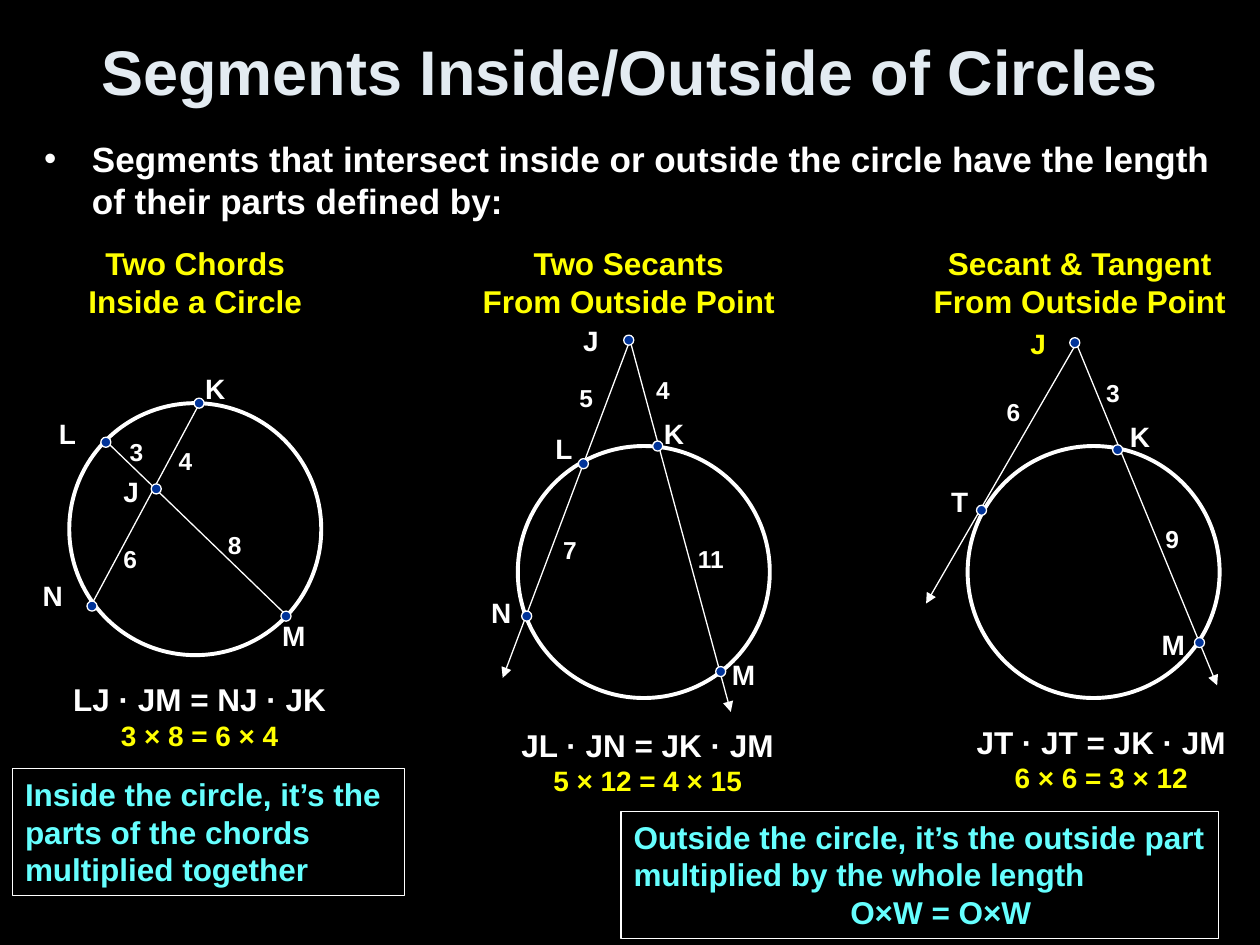
"""Builds the slide on lengths of segments inside and outside circles."""
import lxml.etree
import pptx
import pptx.dml.color
import pptx.enum.shapes
import pptx.enum.text
import pptx.oxml.ns
import pptx.util

Inches, Pt = pptx.util.Inches, pptx.util.Pt
RGBColor = pptx.dml.color.RGBColor
ALIGN = pptx.enum.text.PP_ALIGN
FIT = pptx.enum.text.MSO_AUTO_SIZE
ANCHOR = pptx.enum.text.MSO_ANCHOR
SHAPE = pptx.enum.shapes.MSO_SHAPE
qn = pptx.oxml.ns.qn

BLACK = RGBColor(0x00, 0x00, 0x00)
WHITE = RGBColor(0xFF, 0xFF, 0xFF)
PALE = RGBColor(0xE3, 0xEB, 0xF1)
YELLOW = RGBColor(0xFF, 0xFF, 0x00)
CYAN = RGBColor(0x66, 0xFF, 0xFF)
BLUE = RGBColor(0x00, 0x33, 0x99)

FONT = {"name": "Arial", "bold": True}
RING, DOT = 2, 0.08
WIDTHS = {"J": 0.32, "K": 0.36, "L": 0.34, "M": 0.39, "N": 0.36, "T": 0.34}

TITLE = "Segments Inside/Outside of Circles"
LEAD = ("Segments that intersect inside or outside the circle have the length "
        "of their parts defined by:")

FIGURES = [
    {
        "head": ("Two Chords\nInside a Circle", 0.6, 1.9),
        "ring": (0.55, 3.2),
        "lines": [(1.59, 3.19, 0.71, 4.83), (0.83, 3.49, 2.27, 4.88)],
        "arrow": False,
        "dots": [(1.24, 3.88), (0.84, 3.51), (1.58, 3.2), (0.73, 4.81), (2.27, 4.89)],
        "names": [("J", 0.88, 3.72, WHITE), ("K", 1.53, 2.9, WHITE),
                  ("L", 0.37, 3.26, WHITE), ("M", 2.14, 4.86, WHITE),
                  ("N", 0.24, 4.54, WHITE)],
        "sizes": [("4", 1.32, 3.49), ("6", 0.88, 4.27), ("8", 1.71, 4.16),
                  ("3", 0.93, 3.42)],
        "rule": ("LJ · JM = NJ · JK", "3 × 8 = 6 × 4", 0.47, 5.35, 2.23),
    },
    {
        "head": ("Two Secants\nFrom Outside Point", 3.73, 2.52),
        "ring": (4.11, 3.54),
        "lines": [(5, 2.7, 5.8, 5.65), (5, 2.7, 3.99, 5.38)],
        "arrow": True,
        "dots": [(4.63, 3.68), (5.22, 3.54), (5.72, 5.33), (4.99, 2.7), (4.18, 4.89)],
        "names": [("J", 4.53, 2.52, WHITE), ("K", 5.17, 3.26, WHITE),
                  ("L", 4.31, 3.38, WHITE), ("M", 5.71, 5.17, WHITE),
                  ("N", 3.8, 4.68, WHITE)],
        "sizes": [("5", 4.5, 2.99), ("4", 5.11, 2.93), ("11", 5.44, 4.27),
                  ("7", 4.37, 4.2)],
        "rule": ("JL · JN = JK · JM", "5 × 12 = 4 × 15", 4.03, 5.71, 2.22),
    },
    {
        "head": ("Secant & Tangent\nFrom Outside Point", 7.29, 2.56),
        "ring": (7.68, 3.54),
        "lines": [(8.54, 2.72, 9.66, 5.44), (8.54, 2.73, 7.35, 4.79)],
        "arrow": True,
        "dots": [(7.79, 4.05), (8.87, 3.57), (9.52, 5.1), (8.53, 2.72)],
        "names": [("J", 8.08, 2.54, YELLOW), ("K", 8.87, 3.28, WHITE),
                  ("T", 7.45, 3.8, WHITE), ("M", 9.12, 4.93, WHITE)],
        "sizes": [("6", 7.89, 3.1), ("3", 8.68, 2.95), ("9", 9.15, 4.11)],
        "rule": ("JT · JT = JK · JM", "6 × 6 = 3 × 12", 7.64, 5.69, 2.2),
    },
]

NOTES = [
    (["Inside the circle, it’s the\nparts of the chords\nmultiplied together"],
     (0.1, 6.1, 3.11, 1.01)),
    (["Outside the circle, it’s the outside part multiplied by the whole length",
      "O×W = O×W"], (4.93, 6.44, 4.74, 1.01)),
]
INDENT = 1.72


def place(shape, *box):
    for key, value in zip(("left", "top", "width", "height"), box):
        setattr(shape, key, Inches(value))


def write(shape, rows, align=ALIGN.LEFT, **form):
    frame = shape.text_frame
    for key, value in form.items():
        setattr(frame, key, value)
    for spot, (text, size, color) in enumerate(rows):
        para = frame.add_paragraph() if spot else frame.paragraphs[0]
        para.text, para.alignment = text, align
        para.space_before = Pt(0)
        for run in para.runs:
            for key, value in {**FONT, "size": Pt(size)}.items():
                setattr(run.font, key, value)
            run.font.color.rgb = color
    return frame.paragraphs


def label(slide, rows, box, align=ALIGN.LEFT):
    shape = slide.shapes.add_textbox(*map(Inches, box))
    write(shape, rows, align, word_wrap=False, auto_size=FIT.SHAPE_TO_FIT_TEXT)


def solid(slide, kind, box, width, fill=None):
    shape = slide.shapes.add_shape(kind, *map(Inches, box))
    shape.shadow.inherit = False
    if fill is None:
        shape.fill.background()
    else:
        shape.fill.solid()
        shape.fill.fore_color.rgb = fill
    shape.line.color.rgb, shape.line.width = WHITE, Pt(width)
    return shape


def link(slide, ends, arrow):
    kind = pptx.enum.shapes.MSO_CONNECTOR.STRAIGHT
    line = slide.shapes.add_connector(kind, *map(Inches, ends))
    line.line.color.rgb, line.line.width = WHITE, Pt(0.75)
    props = line.element.spPr
    if arrow:
        lxml.etree.SubElement(props.find(qn("a:ln")), qn("a:tailEnd"), type="triangle")
    lxml.etree.SubElement(props, qn("a:effectLst"))


def draw(slide, fig):
    solid(slide, SHAPE.OVAL, (*fig["ring"], RING, RING), 2.25)
    for ends in fig["lines"]:
        link(slide, ends, fig["arrow"])
    for x, y in fig["dots"]:
        solid(slide, SHAPE.OVAL, (x - DOT / 2, y - DOT / 2, DOT, DOT), 0.75, BLUE)
    for name, x, y, color in fig["names"]:
        label(slide, [(name, 16, color)], (x, y, WIDTHS[name], 0.37))
    for size, x, y in fig["sizes"]:
        label(slide, [(size, 14, WHITE)], (x, y, 0.21 + 0.1 * len(size), 0.34))
    text, x, wide = fig["head"]
    label(slide, [(text, 18, YELLOW)], (x, 1.89, wide, 0.7), ALIGN.CENTER)
    law, case, x, y, wide = fig["rule"]
    rows = [(law, 18, WHITE), (case, 16, YELLOW)]
    label(slide, rows, (x, y, wide, 0.67), ALIGN.CENTER)


def main():
    deck = pptx.Presentation()
    deck.slide_width, deck.slide_height = Inches(10), Inches(7.5)
    slide = deck.slides.add_slide(deck.slide_layouts[1])
    slide.background.fill.solid()
    slide.background.fill.fore_color.rgb = BLACK

    title, body = slide.placeholders
    place(title, 0.5, 0.1, 9, 0.92)
    write(title, [(TITLE, 36, PALE)], ALIGN.CENTER, word_wrap=True,
          auto_size=FIT.NONE, vertical_anchor=ANCHOR.MIDDLE)
    place(body, 0.25, 1.04, 9.49, 1.16)
    lead = write(body, [(LEAD, 20, WHITE)], word_wrap=True, auto_size=FIT.NONE)[0]
    props = lead._p.get_or_add_pPr()
    props.set("marL", str(Inches(0.38)))
    props.set("indent", str(Inches(-0.38)))
    lxml.etree.SubElement(props, qn("a:buChar"), char="•")

    for fig in FIGURES:
        draw(slide, fig)
    for texts, box in NOTES:
        shape = solid(slide, SHAPE.RECTANGLE, box, 0.75)
        paras = write(shape, [(text, 18, CYAN) for text in texts],
                      word_wrap=True, vertical_anchor=ANCHOR.TOP)
        for para in paras[1:]:
            para._p.get_or_add_pPr().set("marL", str(Inches(INDENT)))
    deck.save("out.pptx")


if __name__ == "__main__":
    main()
